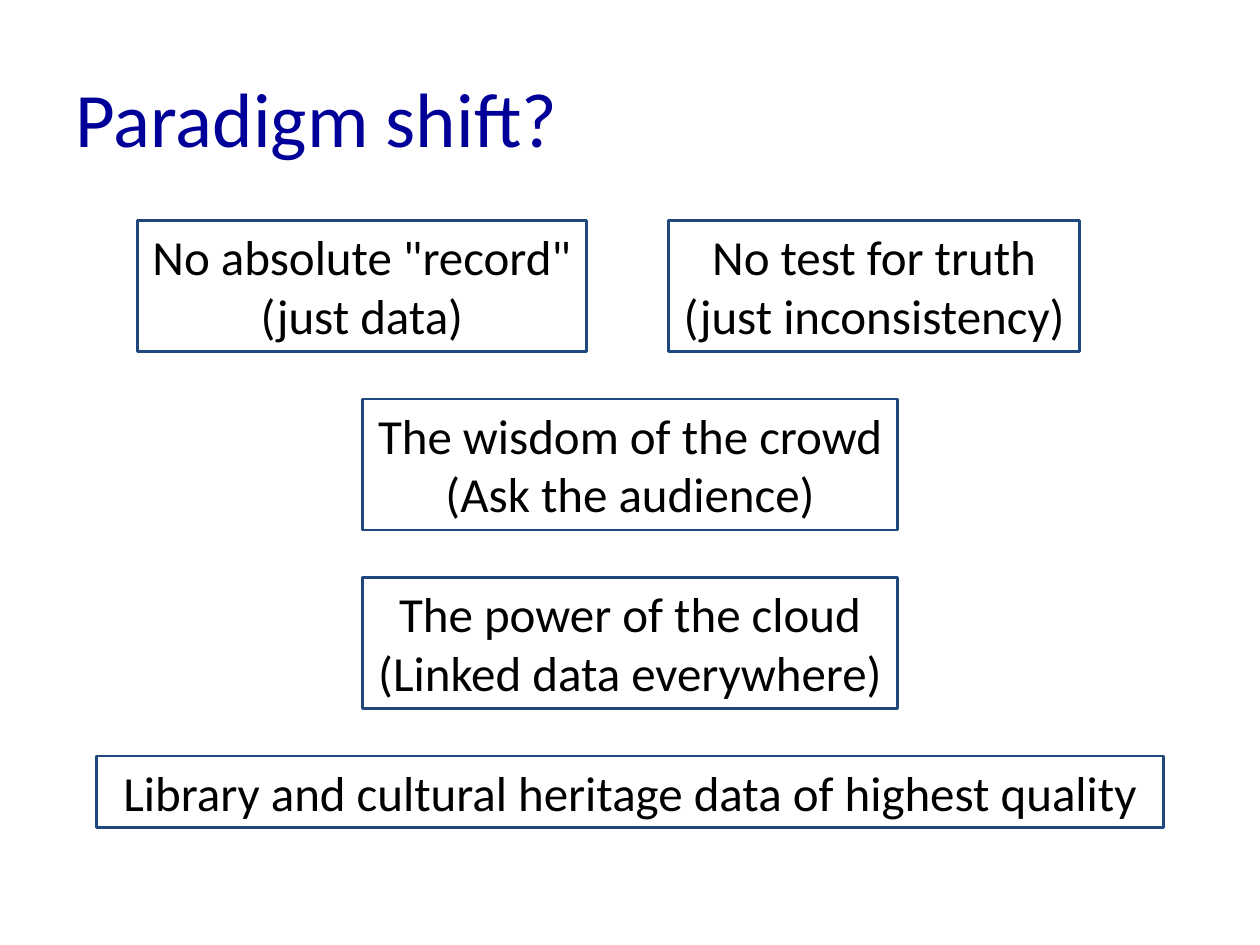
import pptx
import pptx.util
import pptx.dml.color
import pptx.enum.shapes
import pptx.enum.text

Pt = pptx.util.Pt
RGB = pptx.dml.color.RGBColor
ALIGN = pptx.enum.text.PP_ALIGN
ANCHOR = pptx.enum.text.MSO_ANCHOR
FIT = pptx.enum.text.MSO_AUTO_SIZE

NAVY = RGB(0x00, 0x00, 0x99)
BLUE = RGB(0x1F, 0x49, 0x7D)
BLACK = RGB(0x00, 0x00, 0x00)

WIDTH, HEIGHT = 720, 540
TOP, PITCH = 126, 102


def write(frame, text, size=28, color=BLACK, align=ALIGN.CENTER,
          anchor=ANCHOR.TOP, wrap=False, fit=FIT.SHAPE_TO_FIT_TEXT):
    frame.text = text
    frame.word_wrap = wrap
    frame.auto_size = fit
    frame.vertical_anchor = anchor
    for para in frame.paragraphs:
        para.alignment = align
        para.font.name = "Calibri"
        para.font.size = Pt(size)
        para.font.color.rgb = color


class Deck:
    def __init__(self):
        self.show = pptx.Presentation()
        self.show.slide_width = Pt(WIDTH)
        self.show.slide_height = Pt(HEIGHT)
        self.slide = self.show.slides.add_slide(self.show.slide_layouts[5])

    def title(self, text):
        head = self.slide.shapes.title
        head.left, head.top = Pt(36), Pt(21.6)
        head.width, head.height = Pt(648), Pt(90)
        write(head.text_frame, text, size=44, color=NAVY, align=ALIGN.LEFT,
              anchor=ANCHOR.MIDDLE, wrap=True, fit=FIT.NONE)

    def box(self, text, row, width, left=None, height=75):
        if left is None:
            left = (WIDTH - width) / 2
        shape = self.slide.shapes.add_shape(
            pptx.enum.shapes.MSO_SHAPE.RECTANGLE,
            Pt(left), Pt(TOP + row * PITCH), Pt(width), Pt(height))
        shape.shadow.inherit = False
        shape.fill.background()
        shape.line.color.rgb = BLUE
        shape.line.width = Pt(1.5)
        write(shape.text_frame, text)


def main():
    deck = Deck()
    deck.title("Paradigm shift?")
    deck.box("The wisdom of the crowd\n(Ask the audience)", 1, 306)
    deck.box("The power of the cloud\n(Linked data everywhere)", 2, 305.5)
    deck.box('No absolute "record"\n(just data)', 0, 256.5, left=78.5)
    deck.box("No test for truth\n(just inconsistency)", 0, 235, left=382)
    deck.box("Library and cultural heritage data of highest quality",
             3, 610, height=41)
    deck.show.save("out.pptx")


if __name__ == "__main__":
    main()
